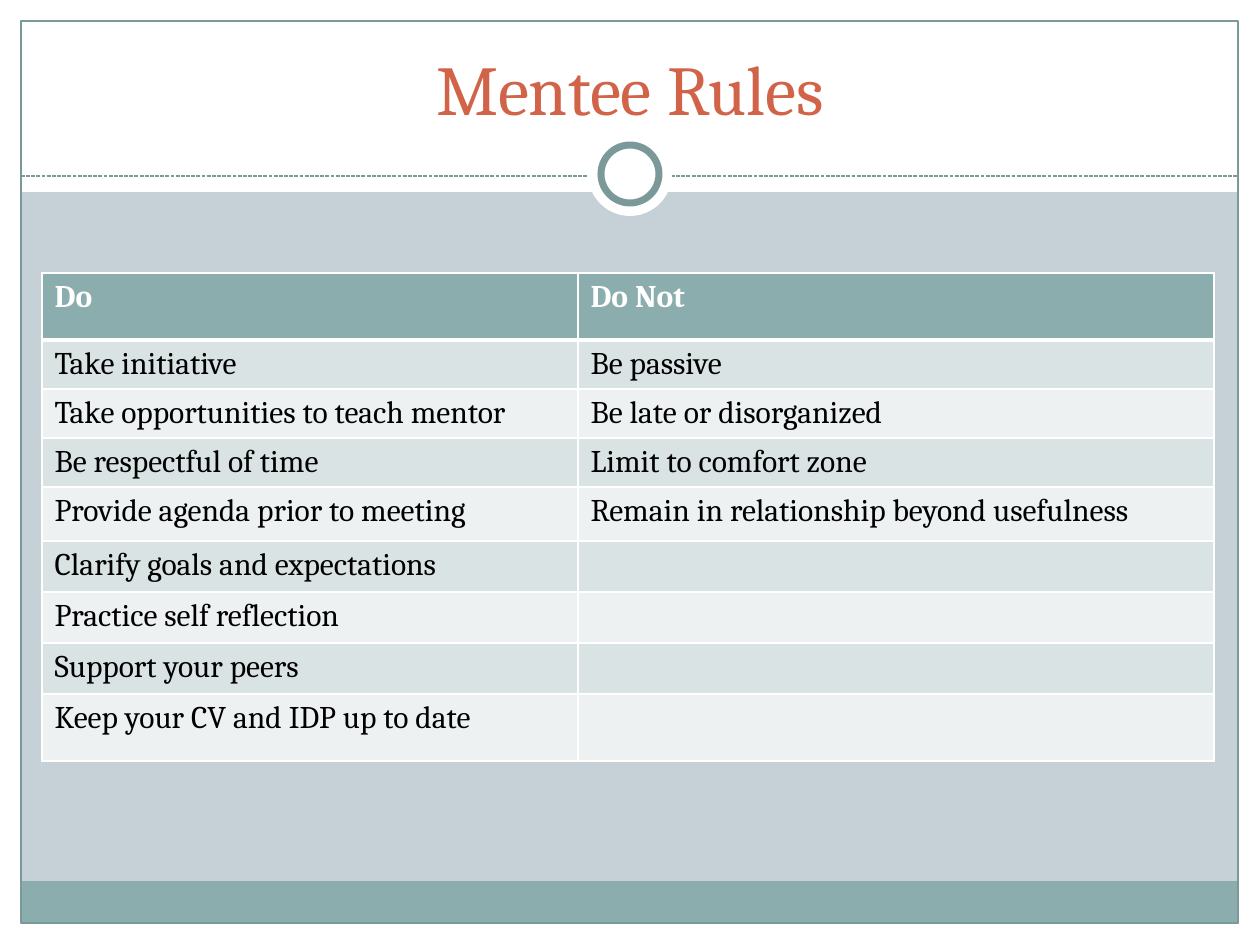
from dataclasses import dataclass
from typing import Optional

from lxml.etree import SubElement
from pptx import Presentation
from pptx.dml.color import RGBColor
from pptx.enum.dml import MSO_LINE as Dash
from pptx.enum.shapes import MSO_CONNECTOR as Conn, MSO_SHAPE as Kind
from pptx.enum.text import MSO_ANCHOR as Anchor, PP_ALIGN as Align
from pptx.oxml import parse_xml
from pptx.oxml.ns import nsdecls, qn
from pptx.util import Emu, Pt

SCALE = 914400 / 126  # EMU in one px
FONT = "Cambria"
WHITE, TEAL, EDGE = "FFFFFF", "8CADAE", "7C999A"
BANDS = ("DAE3E3", "EEF1F2")


@dataclass
class Part:
    kind: Kind
    box: tuple[int, int, int, int]
    fill: Optional[str] = None
    line: Optional[str] = None
    width: float = 0.75


def px(n: int) -> Emu:
    return Emu(round(n * SCALE))


def color(code: str) -> RGBColor:
    return RGBColor.from_string(code)


def place(shape, box: tuple[int, int, int, int]) -> None:
    shape.left, shape.top, shape.width, shape.height = map(px, box)


def style(para, size: int, code: str, bold: bool = False) -> None:
    for run in para.runs:
        font = run.font
        font.name, font.size, font.bold = FONT, Pt(size), bold
        font.color.rgb = color(code)


def draw(slide, part: Part) -> None:
    shape = slide.shapes.add_shape(part.kind, *map(px, part.box))
    shape.shadow.inherit = False
    if part.fill:
        shape.fill.solid()
        shape.fill.fore_color.rgb = color(part.fill)
    else:
        shape.fill.background()
    if part.line:
        shape.line.color.rgb = color(part.line)
        shape.line.width = Pt(part.width)
    else:
        shape.line.fill.background()


def rule(slide, left: int, right: int, y: int) -> None:
    line = slide.shapes.add_connector(Conn.STRAIGHT, px(left), px(y), px(right), px(y))
    line.line.color.rgb = color(EDGE)
    line.line.width = Pt(0.75)
    line.line.dash_style = Dash.SQUARE_DOT
    SubElement(line._element.spPr, qn("a:effectLst"))


def border(cell, base: int) -> None:
    props = cell._tc.get_or_add_tcPr()
    for i, (side, width) in enumerate({"L": 1, "R": 1, "T": 1, "B": base}.items()):
        props.insert(i, parse_xml(
            f'<a:ln{side} {nsdecls("a")} w="{Pt(width)}"><a:solidFill>'
            f'<a:srgbClr val="{WHITE}"/></a:solidFill></a:ln{side}>'))


def fill_cell(cell, text: str, row: int) -> None:
    head = row == 0
    cell.text_frame.text = text
    style(cell.text_frame.paragraphs[0], 18, WHITE if head else "000000", head)
    cell.fill.solid()
    cell.fill.fore_color.rgb = color(TEAL if head else BANDS[(row - 1) % 2])
    border(cell, 3 if head else 1)


def add_grid(slide, rows: list[tuple[str, str]]) -> None:
    cols, tall = (536, 636), (67, 49, 49, 49, 54, 49, 49, 49, 67)
    grid = slide.shapes.add_table(
        len(rows), len(cols), px(42), px(273), px(sum(cols)), px(sum(tall))).table
    for col, wide in zip(grid.columns, cols):
        col.width = px(wide)
    for i, (texts, high) in enumerate(zip(rows, tall)):
        grid.rows[i].height = px(high)
        for j, text in enumerate(texts):
            fill_cell(grid.cell(i, j), text, i)


FRAME = [
    Part(Kind.RECTANGLE, (0, 924, 1260, 21), WHITE),
    Part(Kind.RECTANGLE, (0, 0, 1260, 192), WHITE),
    Part(Kind.RECTANGLE, (0, 0, 21, 945), WHITE),
    Part(Kind.RECTANGLE, (1239, 0, 21, 945), WHITE),
    Part(Kind.RECTANGLE, (21, 881, 1217, 43), TEAL),
    Part(Kind.RECTANGLE, (21, 21, 1217, 902), line=EDGE),
]
RING = [
    Part(Kind.OVAL, (588, 132, 84, 84), WHITE),
    Part(Kind.OVAL, (601, 145, 58, 58), WHITE, EDGE, 4),
]
RULES = [
    ("Do", "Do Not"),
    ("Take initiative", "Be passive"),
    ("Take opportunities to teach mentor", "Be late or disorganized"),
    ("Be respectful of time", "Limit to comfort zone"),
    ("Provide agenda prior to meeting", "Remain in relationship beyond usefulness"),
    ("Clarify goals and expectations", ""),
    ("Practice self reflection", ""),
    ("Support your peers", ""),
    ("Keep your CV and IDP up to date", ""),
]


def main() -> None:
    deck = Presentation()
    deck.slide_width, deck.slide_height = px(1260), px(945)
    slide = deck.slides.add_slide(deck.slide_layouts[5])
    back = slide.background.fill
    back.solid()
    back.fore_color.rgb = color("C5D1D7")

    # Frame, dashed rule and ring
    for part in FRAME:
        draw(slide, part)
    rule(slide, 21, 1239, 176)
    for part in RING:
        draw(slide, part)

    # Title, raised above the white band
    title = slide.shapes.title
    place(title, (42, 32, 1176, 104))
    frame = title.text_frame
    frame.text = "Mentee Rules"
    frame.vertical_anchor = Anchor.BOTTOM
    frame.paragraphs[0].alignment = Align.CENTER
    style(frame.paragraphs[0], 40, "D16349")
    slide.shapes._spTree.append(title._element)

    # Table of rules
    add_grid(slide, RULES)
    deck.save("out.pptx")


if __name__ == "__main__":
    main()
